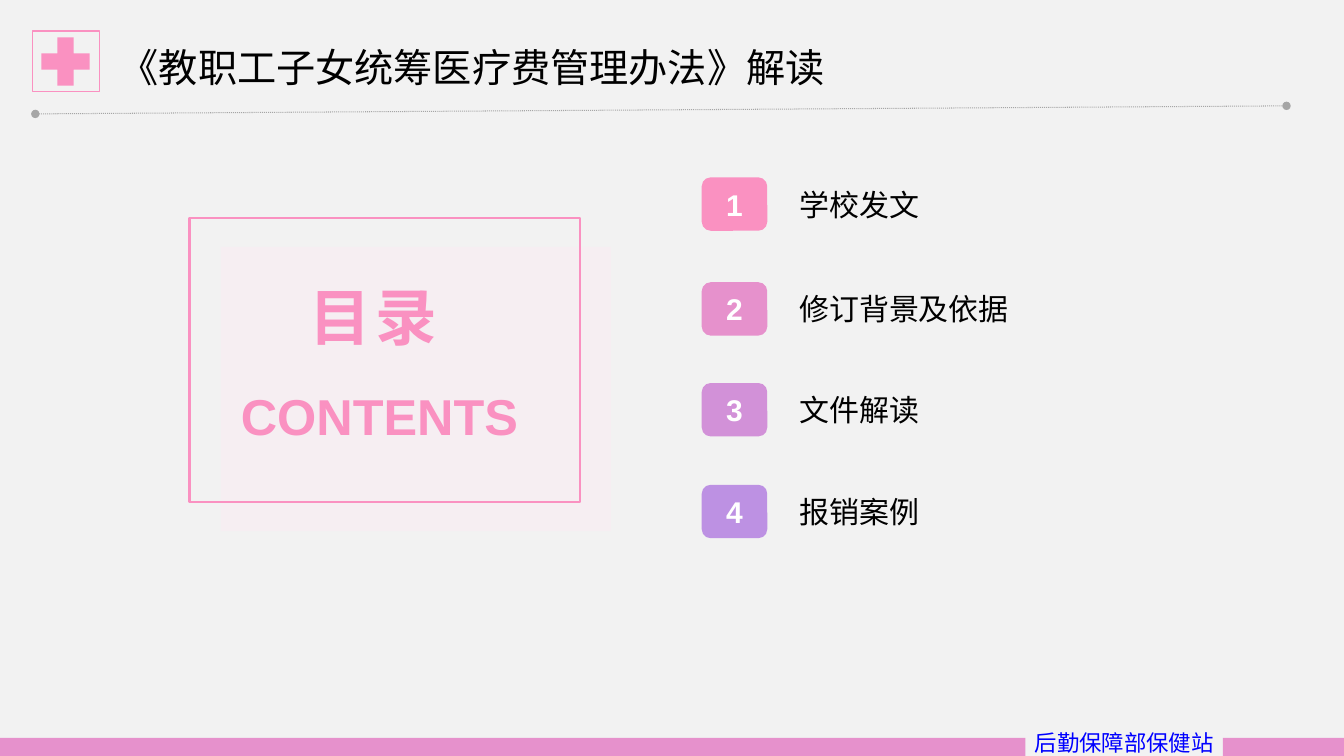
from lxml.etree import SubElement
from pptx import Presentation
from pptx.dml.color import RGBColor
from pptx.enum.dml import MSO_LINE_DASH_STYLE as Dash
from pptx.enum.shapes import MSO_CONNECTOR as Connector, MSO_SHAPE as Shape
from pptx.enum.text import MSO_ANCHOR as Anchor, MSO_AUTO_SIZE as AutoSize, PP_ALIGN as Align
from pptx.oxml.ns import qn
from pptx.util import Inches, Pt

PINK, ROSE, ORCHID, VIOLET = "FA91C1", "E691CC", "D291D8", "BD91E3"
ITEMS = [
    ("学校发文", PINK, 1.76),
    ("修订背景及依据", ROSE, 2.8),
    ("文件解读", ORCHID, 3.8),
    ("报销案例", VIOLET, 4.81),
]
BADGE_HEIGHT, LABEL_HEIGHT = 0.53, 0.64
ITEM_SIZE = 21.4


def rgb(color):
    return RGBColor.from_string(color)


class SlideBuilder:
    latin = "Arial"
    chinese = "Noto Sans CJK SC"

    def __init__(self, page, background):
        self.page = page
        fill = page.background.fill
        fill.solid()
        fill.fore_color.rgb = rgb(background)

    def shape(self, kind, place, fill=None, line=None, width=1, alpha=None):
        shape = self.page.shapes.add_shape(kind, *map(Inches, place))
        shape.shadow.inherit = False
        if fill:
            shape.fill.solid()
            shape.fill.fore_color.rgb = rgb(fill)
        else:
            shape.fill.background()
        if alpha:
            color = shape._element.spPr.find(qn("a:solidFill"))[0]
            SubElement(color, qn("a:alpha"), val=str(alpha * 1000))
        if line:
            shape.line.color.rgb = rgb(line)
            shape.line.width = Pt(width)
        else:
            shape.line.fill.background()
        return shape

    def label(self, shape, text, size, color, bold=False, align=Align.LEFT,
              anchor=Anchor.TOP, font=None, spacing=None):
        frame = shape.text_frame
        frame.vertical_anchor = anchor
        para = frame.paragraphs[0]
        para.text = text
        para.alignment = align
        para.font.name = font or self.latin
        para.font.size = Pt(size)
        para.font.bold = bold
        para.font.color.rgb = rgb(color)
        properties = para._p.pPr.find(qn("a:defRPr"))
        SubElement(properties, qn("a:ea"), typeface=self.chinese)
        if spacing:
            properties.set("spc", str(round(spacing * 100)))

    def text(self, place, text, size, color, wrap=True, **style):
        box = self.page.shapes.add_textbox(*map(Inches, place))
        box.text_frame.word_wrap = wrap
        self.label(box, text, size, color, **style)
        return box

    def dotted_line(self, start, end, color, width):
        line = self.page.shapes.add_connector(
            Connector.STRAIGHT, *map(Inches, start + end))
        line.line.color.rgb = rgb(color)
        line.line.width = Pt(width)
        line.line.dash_style = Dash.ROUND_DOT
        outline = line._element.spPr.find(qn("a:ln"))
        for tag in ("a:headEnd", "a:tailEnd"):
            SubElement(outline, qn(tag), type="oval")
        SubElement(line._element.spPr, qn("a:effectLst"))


def main():
    deck = Presentation()
    deck.slide_width, deck.slide_height = Inches(13.33), Inches(7.5)
    slide = SlideBuilder(deck.slides.add_slide(deck.slide_layouts[6]), "F2F2F2")

    cross = slide.shape(Shape.CROSS, (0.41, 0.37, 0.48, 0.48), PINK)
    cross.adjustments[0] = 0.33
    slide.shape(Shape.RECTANGLE, (0.32, 0.31, 0.67, 0.6), line=PINK)

    slide.shape(Shape.RECTANGLE, (2.19, 2.45, 3.87, 2.82), "FEE9F3", alpha=41)
    slide.shape(Shape.RECTANGLE, (1.88, 2.16, 3.87, 2.82), line=PINK, width=1.5)
    slide.text((2.23, 2.72, 2.95, 0.84), "目录", 44, PINK, wrap=False,
               bold=True, align=Align.CENTER, spacing=2.8)
    slide.text((2.29, 3.77, 3.2, 0.71), "CONTENTS", 36, PINK, bold=True)

    for number, (topic, color, top) in enumerate(ITEMS, 1):
        badge = slide.shape(Shape.ROUNDED_RECTANGLE,
                            (6.96, top, 0.65, BADGE_HEIGHT), color)
        slide.label(badge, str(number), ITEM_SIZE, "FFFFFF", bold=True,
                    align=Align.CENTER, anchor=Anchor.MIDDLE)
        topic_top = top - (LABEL_HEIGHT - BADGE_HEIGHT) / 2
        slide.text((7.83, topic_top, 3.96, LABEL_HEIGHT), topic, ITEM_SIZE,
                   "000000", anchor=Anchor.MIDDLE)

    slide.dotted_line((0.35, 1.13), (12.76, 1.05), "A6A6A6", 0.75)
    title = slide.text((1.09, 0.38, 7.27, 1.04),
                       "《教职工子女统筹医疗费管理办法》解读", 28, "000000",
                       wrap=False, font=slide.chinese)
    title.text_frame.auto_size = AutoSize.SHAPE_TO_FIT_TEXT

    for left, width in ((0, 10.17), (12.13, 1.2)):
        slide.shape(Shape.RECTANGLE, (left, 7.32, width, 0.18), ROSE)
    footer = slide.text((9.33, 7.09, 3.64, 0.41), "后勤保障部保健站", 16,
                        "0000FF", align=Align.CENTER, anchor=Anchor.BOTTOM)
    footer.text_frame.margin_bottom = 0

    deck.save("out.pptx")


if __name__ == "__main__":
    main()
